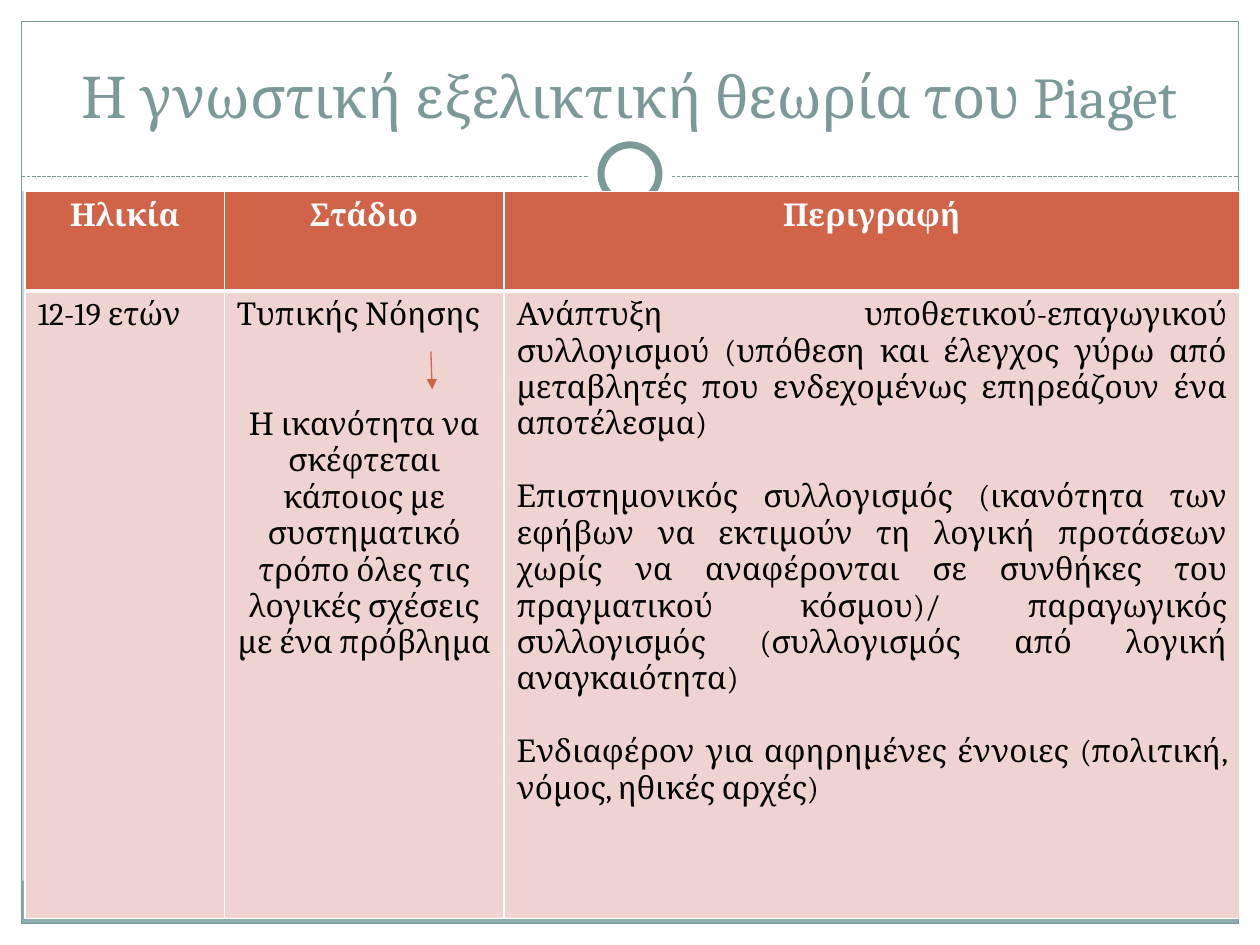
from pptx import Presentation
from pptx.dml.color import RGBColor
from pptx.enum.dml import MSO_LINE
from pptx.enum.shapes import MSO_CONNECTOR, MSO_SHAPE
from pptx.enum.text import MSO_ANCHOR, PP_ALIGN
from pptx.oxml.ns import qn
from pptx.util import Inches, Pt
from lxml.etree import SubElement

WIDTH, HEIGHT = 10, 7.5
MARGIN = 0.17
TABLE_TOP = 1.52
RULE_Y = 1.4
FONT = "Cambria"
TEXT_SIZE = 18
LINE_PITCH = 21
COLUMNS = [1.58, 2.22, 5.84]
ROWS = [0.79, 4.98]
COLORS = {
    "background": "C5D1D7",
    "white": "FFFFFF",
    "black": "000000",
    "teal": "7C999A",
    "band": "8CADAE",
    "accent": "D16349",
    "body": "EED3D0",
}
HEADERS = ["Ηλικία", "Στάδιο", "Περιγραφή"]
BODY = [
    (["12-19 ετών"], [PP_ALIGN.LEFT], 0),
    (
        [
            "Τυπικής Νόησης",
            "Η ικανότητα να σκέφτεται κάποιος με συστηματικό τρόπο όλες τις "
            "λογικές σχέσεις με ένα πρόβλημα",
        ],
        [PP_ALIGN.LEFT, PP_ALIGN.CENTER],
        2,
    ),
    (
        [
            "Ανάπτυξη υποθετικού-επαγωγικού συλλογισμού (υπόθεση και έλεγχος "
            "γύρω από μεταβλητές που ενδεχομένως επηρεάζουν ένα αποτέλεσμα)",
            "Επιστημονικός συλλογισμός (ικανότητα των εφήβων να εκτιμούν τη "
            "λογική προτάσεων χωρίς να αναφέρονται σε συνθήκες του πραγματικού "
            "κόσμου)/ παραγωγικός συλλογισμός (συλλογισμός από λογική "
            "αναγκαιότητα)",
            "Ενδιαφέρον για αφηρημένες έννοιες (πολιτική, νόμος, ηθικές αρχές)",
        ],
        [PP_ALIGN.JUSTIFY] * 3,
        1,
    ),
]


def color(name):
    return RGBColor.from_string(COLORS[name])


def add_block(slide, kind, box, fill=None, line=None, weight=0.75):
    shape = slide.shapes.add_shape(kind, *map(Inches, box))
    shape.shadow.inherit = False
    if fill:
        shape.fill.solid()
        shape.fill.fore_color.rgb = color(fill)
    else:
        shape.fill.background()
    if line:
        shape.line.color.rgb = color(line)
        shape.line.width = Pt(weight)
    else:
        shape.line.fill.background()


def add_line(slide, start, end, line, dash=None, arrow=False):
    connector = slide.shapes.add_connector(
        MSO_CONNECTOR.STRAIGHT, *map(Inches, start + end)
    )
    connector.line.color.rgb = color(line)
    connector.line.width = Pt(0.75)
    if dash:
        connector.line.dash_style = dash
    if arrow:
        SubElement(connector.line._get_or_add_ln(), qn("a:tailEnd"), type="triangle")
    SubElement(connector.element.spPr, qn("a:effectLst"))


def add_frame(slide):
    rectangle, ellipse = MSO_SHAPE.RECTANGLE, MSO_SHAPE.OVAL
    inner_width, inner_height = WIDTH - 2 * MARGIN, HEIGHT - 2 * MARGIN
    for box in (
        (0, HEIGHT - MARGIN, WIDTH, MARGIN),
        (0, 0, WIDTH, TABLE_TOP),
        (0, 0, MARGIN, HEIGHT),
        (WIDTH - MARGIN, 0, MARGIN, HEIGHT),
    ):
        add_block(slide, rectangle, box, "white")
    add_block(slide, rectangle, (MARGIN, 6.99, inner_width, 0.34), "band")
    add_block(slide, rectangle, (MARGIN, MARGIN, inner_width, inner_height), line="teal")
    add_line(slide, (MARGIN, RULE_Y), (WIDTH - MARGIN, RULE_Y), "teal", MSO_LINE.SQUARE_DOT)
    for size, line in ((0.67, None), (0.46, "teal")):
        box = (WIDTH / 2 - size / 2, 1.38 - size / 2, size, size)
        add_block(slide, ellipse, box, "white", line, 4)


def format_paragraph(paragraph, size, font_color, alignment, bold=False):
    paragraph.alignment = alignment
    paragraph.font.name = FONT
    paragraph.font.size = Pt(size)
    paragraph.font.bold = bold
    paragraph.font.color.rgb = color(font_color)


def place_title(slide, text):
    title = slide.shapes.title
    title.left, title.top, title.width, title.height = map(Inches, (0.33, 0.25, 9.33, 0.83))
    title.text_frame.text = text
    title.text_frame.vertical_anchor = MSO_ANCHOR.BOTTOM
    format_paragraph(title.text_frame.paragraphs[0], 33, "teal", PP_ALIGN.CENTER)
    title.element.getparent().append(title.element)


def set_borders(cell, bottom):
    properties = cell._tc.get_or_add_tcPr()
    widths = {"lnL": 1, "lnR": 1, "lnT": 1, "lnB": bottom}
    for position, (side, width) in enumerate(widths.items()):
        line = SubElement(properties, qn(f"a:{side}"), w=str(Pt(width)))
        fill = SubElement(line, qn("a:solidFill"))
        SubElement(fill, qn("a:srgbClr"), val=COLORS["white"])
        properties.insert(position, line)


def fill_cell(cell, texts, alignments, gap_lines, fill, font_color, bold, bottom):
    cell.fill.solid()
    cell.fill.fore_color.rgb = color(fill)
    set_borders(cell, bottom)
    cell.text_frame.text = "\n".join(texts)
    for index, paragraph in enumerate(cell.text_frame.paragraphs):
        format_paragraph(paragraph, TEXT_SIZE, font_color, alignments[index], bold)
        if index:
            paragraph.space_before = Pt(gap_lines * LINE_PITCH)


def add_stage_table(slide):
    box = (0.2, TABLE_TOP, sum(COLUMNS), sum(ROWS))
    table = slide.shapes.add_table(len(ROWS), len(COLUMNS), *map(Inches, box)).table
    for row, height in zip(table.rows, ROWS):
        row.height = Inches(height)
    for index, width in enumerate(COLUMNS):
        table.columns[index].width = Inches(width)
        fill_cell(
            table.cell(0, index), [HEADERS[index]], [PP_ALIGN.CENTER], 0,
            "accent", "white", True, 3,
        )
        fill_cell(table.cell(1, index), *BODY[index], "body", "black", False, 1)


def main():
    presentation = Presentation()
    presentation.slide_width = Inches(WIDTH)
    presentation.slide_height = Inches(HEIGHT)
    slide = presentation.slides.add_slide(presentation.slide_layouts[5])
    slide.background.fill.solid()
    slide.background.fill.fore_color.rgb = color("background")
    add_frame(slide)
    place_title(slide, "Η γνωστική εξελικτική θεωρία του Piaget")
    add_stage_table(slide)
    add_line(slide, (3.42, 2.79), (3.43, 3.09), "accent", arrow=True)
    presentation.save("out.pptx")


if __name__ == "__main__":
    main()
